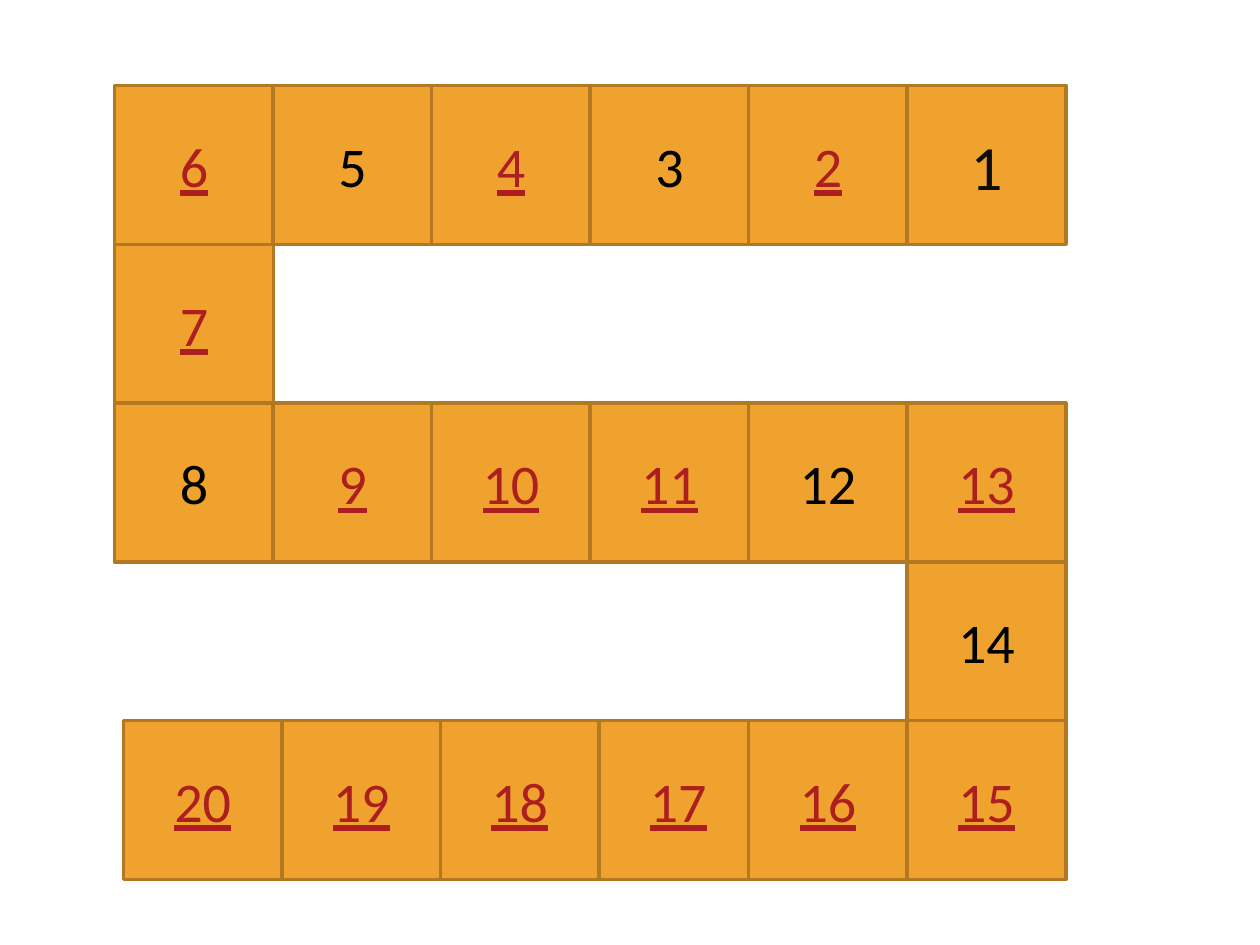
from dataclasses import dataclass

from pptx import Presentation
from pptx.dml.color import RGBColor
from pptx.enum.shapes import MSO_SHAPE
from pptx.enum.text import MSO_ANCHOR, PP_ALIGN
from pptx.slide import Slide
from pptx.util import Inches, Pt

COLORS = {
    "tile": "F0A22E",
    "border": "B27822",
    "linked": "AD1F1F",
    "plain": "000000",
    "start": "0D0D0D",
}
FORMATS = {
    "linked": {"name": "Calibri", "size": Pt(32), "underline": True},
    "plain": {"name": "Calibri", "size": Pt(32)},
    "start": {"name": "Calibri", "size": Pt(36)},
}
PLAIN_NUMBERS = {3, 5, 8, 12, 14}
TILE_SIZE = 1.26
LEFT, RIGHT, TOP = 0.91, 7.2, 0.68
COLUMN_STEP = (RIGHT - LEFT) / 5
LAST_ROW_SHIFT = 0.07


@dataclass
class Run:
    numbers: range
    column: int
    row: int
    shift: float = 0


RUNS = [
    Run(range(6, 0, -1), 0, 0),
    Run(range(7, 8), 0, 1),
    Run(range(8, 14), 0, 2),
    Run(range(14, 15), 5, 3),
    Run(range(20, 16, -1), 0, 4, LAST_ROW_SHIFT),
    Run(range(16, 14, -1), 4, 4),
]


def number_style(number: int) -> str:
    if number == 1:
        return "start"
    return "plain" if number in PLAIN_NUMBERS else "linked"


def draw_tile(page: Slide, number: int, left: float, top: float) -> None:
    tile = page.shapes.add_shape(
        MSO_SHAPE.RECTANGLE, Inches(left), Inches(top), Inches(TILE_SIZE), Inches(TILE_SIZE)
    )
    tile.shadow.inherit = False
    tile.fill.solid()
    tile.fill.fore_color.rgb = RGBColor.from_string(COLORS["tile"])
    tile.line.color.rgb = RGBColor.from_string(COLORS["border"])
    tile.line.width = Pt(2)
    tile.text_frame.vertical_anchor = MSO_ANCHOR.MIDDLE
    paragraph = tile.text_frame.paragraphs[0]
    paragraph.alignment = PP_ALIGN.CENTER
    span = paragraph.add_run()
    span.text = str(number)
    style = number_style(number)
    for attribute, value in FORMATS[style].items():
        setattr(span.font, attribute, value)
    span.font.color.rgb = RGBColor.from_string(COLORS[style])


def draw_run(page: Slide, run: Run) -> None:
    top = TOP + run.row * TILE_SIZE
    for column, number in enumerate(run.numbers, run.column):
        draw_tile(page, number, LEFT + run.shift + column * COLUMN_STEP, top)


def main() -> None:
    deck = Presentation()
    deck.slide_width, deck.slide_height = Inches(10), Inches(7.5)
    page = deck.slides.add_slide(deck.slide_layouts[6])
    for run in RUNS:
        draw_run(page, run)
    deck.save("out.pptx")


if __name__ == "__main__":
    main()
